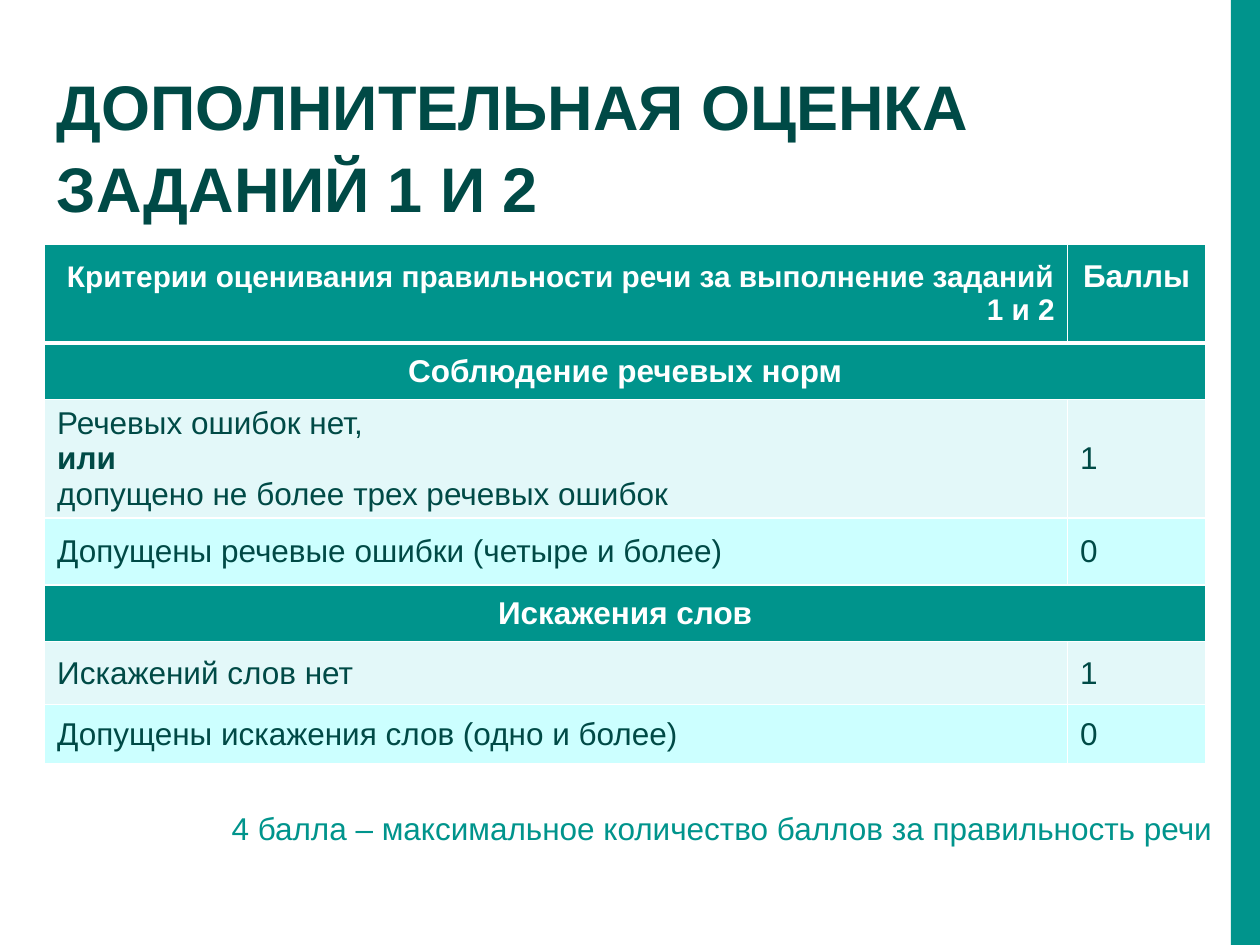
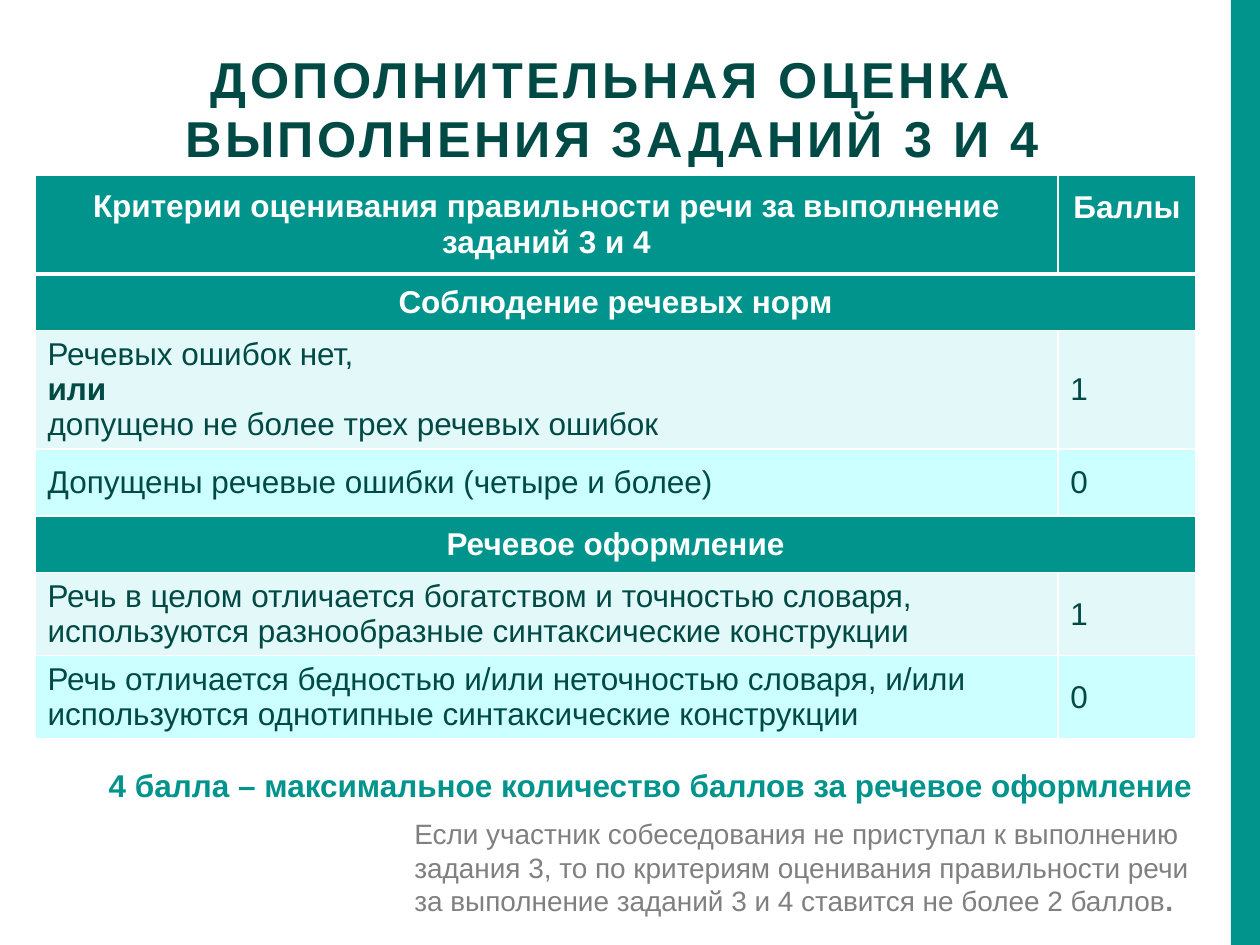
from lxml.etree import SubElement
from pptx import Presentation
from pptx.dml.color import RGBColor
from pptx.enum.shapes import MSO_SHAPE
from pptx.enum.text import MSO_ANCHOR, MSO_AUTO_SIZE, PP_ALIGN
from pptx.oxml.ns import qn
from pptx.util import Pt

TEAL = RGBColor(0x00, 0x94, 0x8C)
DARK = RGBColor(0x00, 0x4A, 0x46)
GRAY = RGBColor(0x80, 0x80, 0x80)
WHITE = RGBColor(0xFF, 0xFF, 0xFF)
PALE = RGBColor(0xE3, 0xF8, 0xF9)
AQUA = RGBColor(0xCC, 0xFF, 0xFF)
LEFT, CENTER, RIGHT = PP_ALIGN.LEFT, PP_ALIGN.CENTER, PP_ALIGN.RIGHT

BASE = {"name": "Arial", "size": Pt(18), "bold": False}
HEAD = {"bold": True, "color": WHITE}
COLUMNS = (584.5, 79)
HEADER_H, SECTION_H = 56.2, 32.4

NORMS = [
    ("Соблюдение речевых норм", None, SECTION_H),
    ("Речевых ошибок нет,\nили\nдопущено не более трех речевых ошибок", "1", 67.6),
    ("Допущены речевые ошибки (четыре и более)", "0", 38.2),
]
SLIDES = [
    {
        "title": ("ДОПОЛНИТЕЛЬНАЯ ОЦЕНКА ЗАДАНИЙ 1 И 2", (25.2, 31.7, 635, 94.3), LEFT, 36, 1.08, 0),
        "header": ("Критерии оценивания правильности речи за выполнение заданий 1 и 2", RIGHT, 17),
        "table_at": (25.5, 139.8),
        "rows": NORMS + [
            ("Искажения слов", None, SECTION_H),
            ("Искажений слов нет", "1", 36),
            ("Допущены искажения слов (одно и более)", "0", 34),
        ],
        "notes": [
            ("4 балла – максимальное количество баллов за правильность речи",
             (0, 459, 700, 29), RIGHT, {"color": TEAL}),
        ],
    },
    {
        "title": ("ДОПОЛНИТЕЛЬНАЯ ОЦЕНКА ВЫПОЛНЕНИЯ ЗАДАНИЙ 3 И 4", (0, 26, 700, 67.7), CENTER, 28.8, 0.97, 2),
        "header": ("Критерии оценивания правильности речи за выполнение заданий 3 и 4", CENTER, 18),
        "table_at": (20, 100.3),
        "rows": NORMS + [
            ("Речевое оформление", None, SECTION_H),
            ("Речь в целом отличается богатством и точностью словаря, "
             "используются разнообразные синтаксические конструкции", "1", 47.4),
            ("Речь отличается бедностью и/или неточностью словаря, и/или "
             "используются однотипные синтаксические конструкции", "0", 47.4),
        ],
        "notes": [
            ("4 балла – максимальное количество баллов за речевое оформление",
             (31, 434.2, 657.4, 29), RIGHT, {"color": TEAL, "bold": True}),
            ("Если участник собеседования не приступал к выполнению\n"
             "задания 3, то по критериям оценивания правильности речи\n"
             "за выполнение заданий 3 и 4 ставится не более 2 баллов|.",
             (229.7, 463, 504.7, 65.5), LEFT, {"color": GRAY, "size": Pt(16)}),
        ],
    },
]


def format_run(r, fmt):
    """Apply a dict of font values over the base format."""
    for key, value in {**BASE, **fmt}.items():
        if key == "color":
            r.font.color.rgb = value
        else:
            setattr(r.font, key, value)


def write(tf, text, align, fmt):
    """Fill a text frame line by line; text after a bar and the word «или» are bold."""
    for i, line in enumerate(text.split("\n")):
        p = tf.add_paragraph() if i else tf.paragraphs[0]
        p.alignment = align
        for j, part in enumerate(line.split("|")):
            r = p.add_run()
            r.text = part
            format_run(r, {**fmt, "bold": True} if j or part == "или" else fmt)


def place(shape, box):
    """Set the position and size of a shape in points."""
    for key, value in zip(("left", "top", "width", "height"), box):
        setattr(shape, key, Pt(value))


def style_cell(cell, fill, top=1, bottom=1):
    """Give a cell white borders, a fill and middle anchoring."""
    tcPr = cell._tc.get_or_add_tcPr()
    for side, width in (("L", 1), ("R", 1), ("T", top), ("B", bottom)):
        ln = SubElement(tcPr, qn(f"a:ln{side}"), w=str(Pt(width)))
        SubElement(SubElement(ln, qn("a:solidFill")), qn("a:srgbClr"), val=str(WHITE))
    cell.fill.solid()
    cell.fill.fore_color.rgb = fill
    cell.vertical_anchor = MSO_ANCHOR.MIDDLE


def add_title(s, text, box, align, size, spacing, tracking):
    """Format the title placeholder."""
    sp = s.shapes.title
    place(sp, box)
    tf = sp.text_frame
    for key, value in {"word_wrap": True, "auto_size": MSO_AUTO_SIZE.NONE,
                       "vertical_anchor": MSO_ANCHOR.TOP}.items():
        setattr(tf, key, value)
    write(tf, text, align, {"size": Pt(size), "bold": True, "color": DARK})
    p = tf.paragraphs[0]
    p.line_spacing = spacing
    p.runs[0]._r.get_or_add_rPr().set("spc", str(tracking * 100))


def add_criteria(s, at, header, rows):
    """Add the table of criteria and scores."""
    heights = [HEADER_H] + [h for *_, h in rows]
    box = [Pt(v) for v in (*at, sum(COLUMNS), sum(heights))]
    table = s.shapes.add_table(len(heights), len(COLUMNS), *box).table
    for column, width in zip(table.columns, COLUMNS):
        column.width = Pt(width)
    for row, height in zip(table.rows, heights):
        row.height = Pt(height)

    text, align, size = header
    criterion, score = table.rows[0].cells
    for cell in (criterion, score):
        style_cell(cell, TEAL, bottom=3)
    write(criterion.text_frame, text, align, {**HEAD, "size": Pt(size)})
    write(score.text_frame, "Баллы", CENTER, HEAD)
    score.vertical_anchor = MSO_ANCHOR.TOP
    score.margin_top = Pt(8)

    for i, (text, points, _) in enumerate(rows, 1):
        criterion, score = table.rows[i].cells
        fill = TEAL if points is None else PALE if i % 3 == 2 else AQUA
        for cell in (criterion, score):
            style_cell(cell, fill, top=3 if i == 1 else 1)
        if points is None:
            criterion.merge(score)
            write(criterion.text_frame, text, CENTER, HEAD)
        else:
            write(criterion.text_frame, text, LEFT, {"color": DARK})
            write(score.text_frame, points, LEFT, {"color": DARK})


def add_note(s, text, box, align, fmt):
    """Add a wrapped text box below the table."""
    sp = s.shapes.add_textbox(*[Pt(v) for v in box])
    sp.text_frame.word_wrap = True
    write(sp.text_frame, text, align, fmt)


def add_band(prs, s):
    """Draw the side band and move it to the slide master."""
    band = s.shapes.add_shape(MSO_SHAPE.RECTANGLE, Pt(703.4), Pt(0), Pt(16.6), Pt(540))
    band.shadow.inherit = False
    band.fill.solid()
    band.fill.fore_color.rgb = TEAL
    band.line.fill.background()
    prs.slide_master.shapes._spTree.append(band._element)


def main():
    """Build the slides and save them."""
    prs = Presentation()
    prs.slide_width, prs.slide_height = Pt(720), Pt(540)
    for i, content in enumerate(SLIDES):
        s = prs.slides.add_slide(prs.slide_layouts[5])
        if i == 0:
            add_band(prs, s)
        add_title(s, *content["title"])
        add_criteria(s, content["table_at"], content["header"], content["rows"])
        for note in content["notes"]:
            add_note(s, *note)
    prs.save("out.pptx")


if __name__ == "__main__":
    main()
